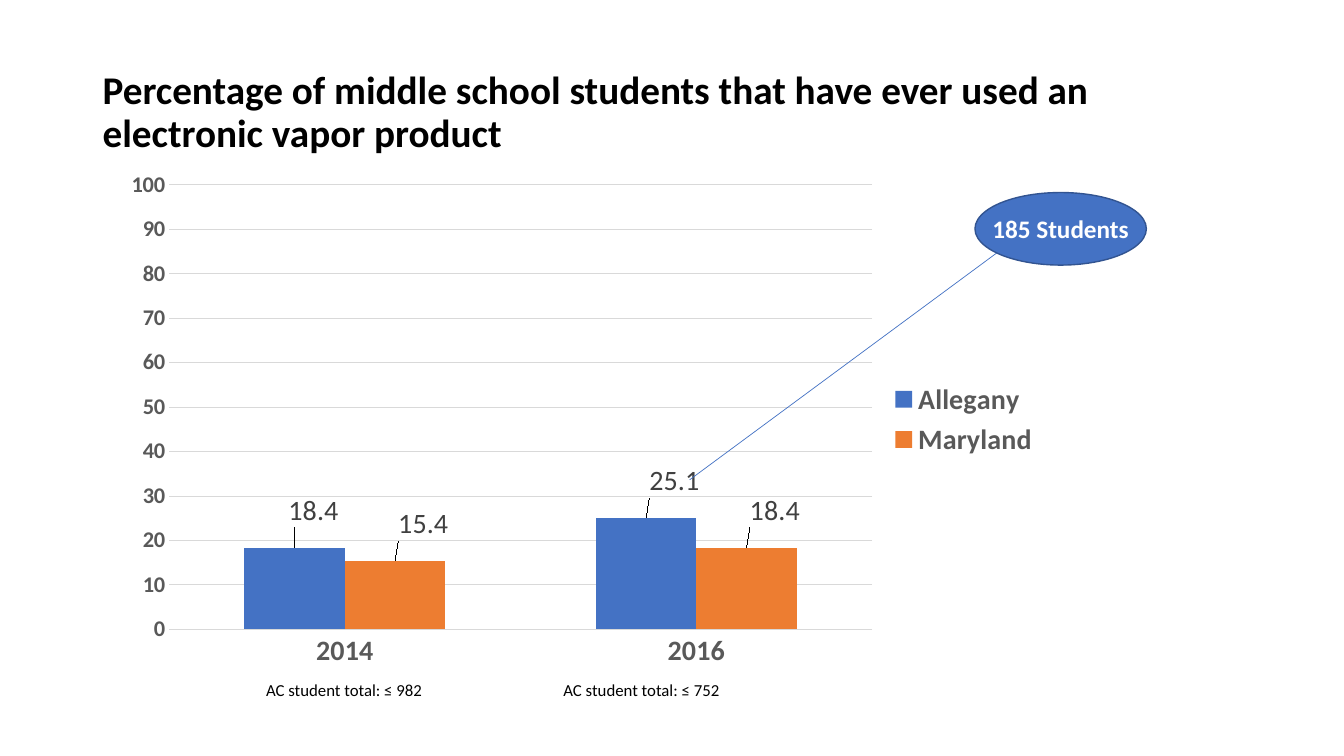
"""Build a slide comparing student vapor product use in two years."""
from dataclasses import dataclass

from lxml.etree import SubElement
from pptx import Presentation
from pptx.chart.data import CategoryChartData
from pptx.dml.color import RGBColor as Rgb
from pptx.enum.chart import XL_CHART_TYPE as ChartType
from pptx.enum.chart import XL_LABEL_POSITION as LabelPosition
from pptx.enum.chart import XL_LEGEND_POSITION as LegendPosition
from pptx.enum.chart import XL_TICK_MARK as TickMark
from pptx.enum.shapes import MSO_CONNECTOR as ConnectorType
from pptx.enum.shapes import MSO_SHAPE as ShapeType
from pptx.enum.text import MSO_ANCHOR as Anchor
from pptx.enum.text import PP_ALIGN as Align
from pptx.oxml import parse_xml
from pptx.oxml.ns import nsdecls, qn
from pptx.slide import Slide
from pptx.util import Inches, Pt


@dataclass(frozen=True)
class Theme:
    """Colours and type sizes of the slide."""
    font: str = "Calibri"
    black: str = "000000"
    white: str = "FFFFFF"
    blue: str = "4472C4"
    orange: str = "ED7D31"
    outline: str = "325491"
    axis: str = "595959"
    label: str = "404040"
    grid: str = "D9D9D9"
    title_size: int = 28
    chart_size: int = 20
    callout_size: int = 18
    scale_size: int = 16
    note_size: int = 12


@dataclass(frozen=True)
class Caption:
    """A text box with its place and look."""
    text: str
    left: float
    top: float
    width: float
    height: float
    size: int
    color: str
    bold: bool = False
    align: Align = Align.LEFT
    anchor: Anchor = Anchor.TOP
    spacing: float = 1.0


@dataclass(frozen=True)
class Group:
    """A chart series with its label offsets."""
    name: str
    values: tuple[float, ...]
    color: str
    offsets: tuple[tuple[float, float], ...]


THEME = Theme()
YEARS = ("2014", "2016")
GROUPS = (
    Group("Allegany", (18.4, 25.1), THEME.blue, ((0.02, -0.03), (0.03, -0.03))),
    Group("Maryland", (15.4, 18.4), THEME.orange, ((0.03, -0.03), (0.03, -0.03))),
)
PLOT_AREA = {"x": 0.067, "y": 0.056, "w": 0.745, "h": 0.842}
TITLE = Caption("Percentage of middle school students that have ever used an electronic vapor product",
                0.92, 0.4, 11.5, 1.45, THEME.title_size, THEME.black, True,
                anchor=Anchor.MIDDLE, spacing=0.9)
CALLOUT = Caption("185 Students", 9.67, 2.07, 1.7, 0.4,
                  THEME.callout_size, THEME.white, True, Align.CENTER)
NOTES = (
    Caption("AC student total: ≤ 982", 2.54, 6.69, 1.92, 0.3, THEME.note_size, THEME.black),
    Caption("AC student total: ≤ 752", 5.49, 6.69, 1.77, 0.3, THEME.note_size, THEME.black),
)


def apply(target: object, values: dict[str, object]) -> None:
    """Set each named attribute on the target."""
    for name, value in values.items():
        setattr(target, name, value)


def style_font(font: object, size: int, color: str, bold: bool = False) -> None:
    """Give a font the theme typeface, a size and a colour."""
    apply(font, {"name": THEME.font, "size": Pt(size), "bold": bold})
    font.color.rgb = Rgb.from_string(color)


def style_line(line: object, color: str, width: float) -> None:
    """Give a line its colour and width."""
    line.color.rgb = Rgb.from_string(color)
    line.width = Pt(width)


def add_caption(page: Slide, caption: Caption) -> None:
    """Add one text box."""
    box = page.shapes.add_textbox(Inches(caption.left), Inches(caption.top),
                                  Inches(caption.width), Inches(caption.height))
    apply(box.text_frame, {"word_wrap": True, "vertical_anchor": caption.anchor})
    para = box.text_frame.paragraphs[0]
    apply(para, {"alignment": caption.align, "line_spacing": caption.spacing})
    span = para.add_run()
    span.text = caption.text
    style_font(span.font, caption.size, caption.color, caption.bold)


def manual_layout(values: dict[str, float], inner: bool = False) -> object:
    """Return a chart layout element with the given fractions."""
    layout = parse_xml(f"<c:layout {nsdecls('c')}><c:manualLayout/></c:layout>")
    settings = {"layoutTarget": "inner", "xMode": "edge", "yMode": "edge"} if inner else {}
    for name, value in (settings | values).items():
        SubElement(layout[0], qn(f"c:{name}")).set("val", str(value))
    return layout


def style_series(series: object, group: Group) -> None:
    """Colour a series and place its value labels."""
    series.format.fill.solid()
    series.format.fill.fore_color.rgb = Rgb.from_string(group.color)
    labels = series.data_labels
    apply(labels, {"show_value": True, "position": LabelPosition.OUTSIDE_END})
    style_font(labels.font, THEME.chart_size, THEME.label)
    for index in range(len(group.values)):
        label = series.points[index].data_label
        style_font(label.font, THEME.chart_size, THEME.label)
        label.position = LabelPosition.OUTSIDE_END
    for element, (x, y) in zip(series._element.iter(qn("c:dLbl")), group.offsets):
        element[0].addnext(manual_layout({"x": x, "y": y}))


def add_usage_chart(page: Slide) -> None:
    """Add the clustered column chart."""
    data = CategoryChartData(number_format="0.0")
    data.categories = YEARS
    for group in GROUPS:
        data.add_series(group.name, group.values)
    chart = page.shapes.add_chart(ChartType.COLUMN_CLUSTERED, Inches(1.05), Inches(1.54),
                                  Inches(9.36), Inches(5.24), data).chart
    apply(chart, {"has_title": False, "has_legend": True})
    apply(chart.legend, {"position": LegendPosition.RIGHT, "include_in_layout": False})
    style_font(chart.legend.font, THEME.chart_size, THEME.axis, True)

    axes = ((chart.category_axis, THEME.chart_size), (chart.value_axis, THEME.scale_size))
    for axis, size in axes:
        apply(axis, {"major_tick_mark": TickMark.NONE, "minor_tick_mark": TickMark.NONE})
        axis.format.line.fill.background()
        style_font(axis.tick_labels.font, size, THEME.axis, True)
    apply(chart.value_axis, {"minimum_scale": 0, "maximum_scale": 100, "major_unit": 10})
    apply(chart.value_axis.tick_labels, {"number_format": "0", "number_format_is_linked": False})
    style_line(chart.value_axis.major_gridlines.format.line, THEME.grid, 0.75)

    plot = chart.plots[0]
    apply(plot, {"gap_width": 150, "overlap": 0, "vary_by_categories": False})
    for series, group in zip(plot.series, GROUPS):
        style_series(series, group)
    area = chart._chartSpace.find(f".//{qn('c:plotArea')}")
    for layout in area.findall(qn("c:layout")):
        area.remove(layout)
    area.insert(0, manual_layout(PLOT_AREA, inner=True))


def add_callout(page: Slide) -> None:
    """Add the oval with its text and the line to its column."""
    pointer = page.shapes.add_connector(ConnectorType.STRAIGHT, Inches(6.84), Inches(4.76),
                                        Inches(9.94), Inches(2.47))
    style_line(pointer.line, THEME.blue, 0.5)
    SubElement(pointer._element.spPr, qn("a:effectLst"))
    oval = page.shapes.add_shape(ShapeType.OVAL, Inches(9.67), Inches(1.91),
                                 Inches(1.7), Inches(0.72))
    oval.shadow.inherit = False
    oval.fill.solid()
    oval.fill.fore_color.rgb = Rgb.from_string(THEME.blue)
    style_line(oval.line, THEME.outline, 1)
    add_caption(page, CALLOUT)


def main() -> None:
    """Build and save the deck."""
    deck = Presentation()
    apply(deck, {"slide_width": Inches(13.33), "slide_height": Inches(7.5)})
    page = deck.slides.add_slide(deck.slide_layouts[6])
    add_caption(page, TITLE)
    add_usage_chart(page)
    add_callout(page)
    for note in NOTES:
        add_caption(page, note)
    deck.save("out.pptx")


if __name__ == "__main__":
    main()
